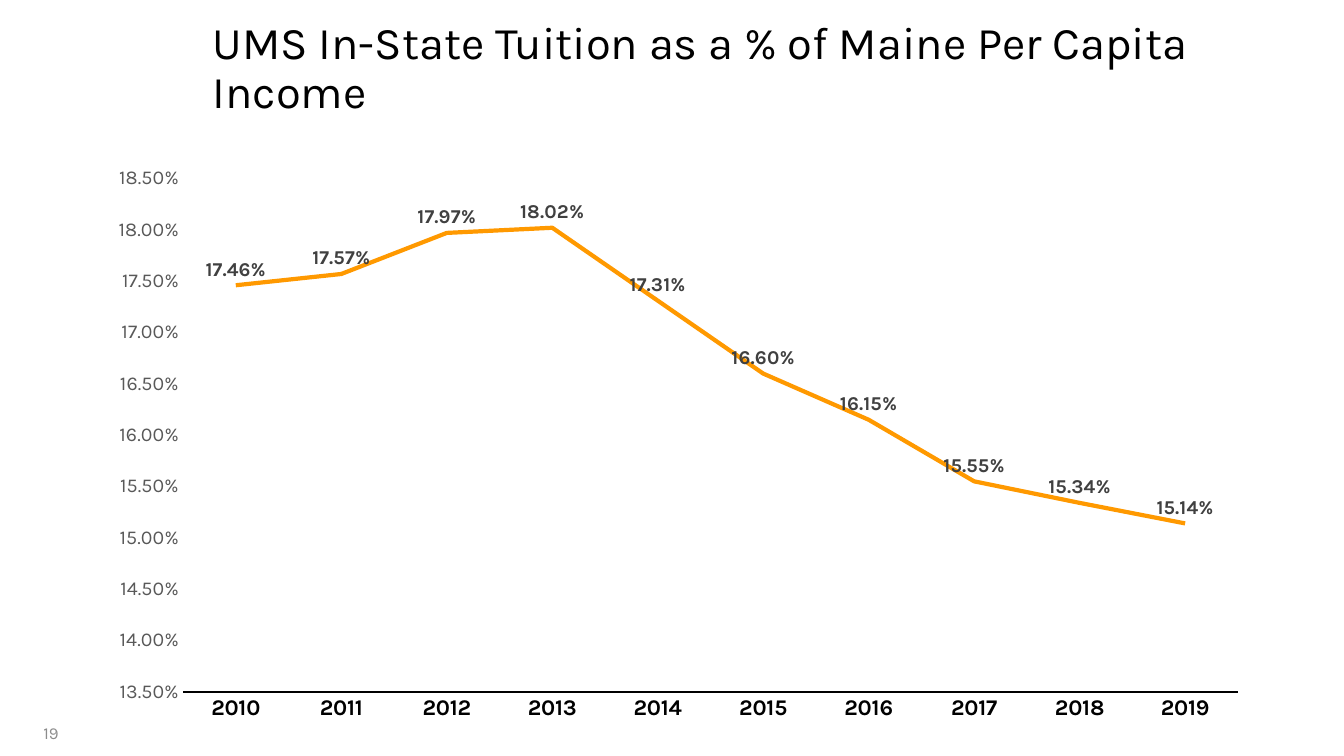
from lxml import etree
from pptx import Presentation
from pptx.chart.data import CategoryChartData
from pptx.dml.color import RGBColor
from pptx.enum.chart import XL_CHART_TYPE, XL_LABEL_POSITION, XL_TICK_MARK
from pptx.enum.chart import XL_MARKER_STYLE
from pptx.enum.text import MSO_ANCHOR, PP_ALIGN
from pptx.oxml.ns import qn
from pptx.util import Cm, Pt

BLACK = RGBColor(0x00, 0x00, 0x00)
ORANGE = RGBColor(0xFF, 0x99, 0x00)
LABEL_GREY = RGBColor(0x40, 0x40, 0x40)
AXIS_GREY = RGBColor(0x59, 0x59, 0x59)
PAGE_GREY = RGBColor(0x8C, 0x8C, 0x8C)

LINE = XL_CHART_TYPE.LINE
ABOVE = XL_LABEL_POSITION.ABOVE
NO_TICK = XL_TICK_MARK.NONE
NO_MARKER = XL_MARKER_STYLE.NONE
MIDDLE = MSO_ANCHOR.MIDDLE
LEFT, RIGHT = PP_ALIGN.LEFT, PP_ALIGN.RIGHT

PERCENT = "0.00%"
YEARS = [str(year) for year in range(2010, 2020)]
TUITION_SHARES = [0.1746, 0.1757, 0.1797, 0.1802, 0.1731,
                  0.1660, 0.1615, 0.1555, 0.1534, 0.1514]
PLOT_LAYOUT = {"layoutTarget": "inner", "xMode": "edge", "yMode": "edge",
               "x": 0.083, "y": 0.073, "w": 0.899, "h": 0.859}


def set_values(target, values):
    for name, value in values.items():
        setattr(target, name, value)


class TuitionSlide:
    font_name = "Karla"

    def __init__(self, deck):
        self.page = deck.slides.add_slide(deck.slide_layouts[6])

    def style_font(self, font, size, color, bold=False):
        set_values(font, {"name": self.font_name, "size": Pt(size), "bold": bold})
        font.color.rgb = color

    def add_text(self, text, place, size, color, align=LEFT, spacing=1.0):
        box = self.page.shapes.add_textbox(*map(Cm, place))
        set_values(box.text_frame, {"word_wrap": True, "vertical_anchor": MIDDLE})
        para = box.text_frame.paragraphs[0]
        set_values(para, {"alignment": align, "line_spacing": spacing})
        span = para.add_run()
        span.text = text
        self.style_font(span.font, size, color)

    def add_line_chart(self, place):
        data = CategoryChartData(number_format=PERCENT)
        data.categories = YEARS
        data.add_series("Series 1", TUITION_SHARES)
        chart = self.page.shapes.add_chart(LINE, *map(Cm, place), data).chart
        set_values(chart, {"has_legend": False, "has_title": False})
        self.style_font(chart.font, 10, BLACK)
        self.style_axes(chart)
        self.style_series(chart.plots[0])
        self.place_plot(chart)

    def style_axes(self, chart):
        years, shares = chart.category_axis, chart.value_axis
        for axis in (years, shares):
            set_values(axis, {"major_tick_mark": NO_TICK, "minor_tick_mark": NO_TICK,
                              "has_major_gridlines": False})
        self.style_font(years.tick_labels.font, 16, BLACK, bold=True)
        years.format.line.color.rgb = BLACK
        years.format.line.width = Pt(1.5)
        self.style_font(shares.tick_labels.font, 14, AXIS_GREY)
        set_values(shares, {"minimum_scale": 0.135, "maximum_scale": 0.185,
                            "major_unit": 0.005})
        set_values(shares.tick_labels, {"number_format": PERCENT,
                                        "number_format_is_linked": False})
        shares.format.line.fill.background()

    def style_series(self, plot):
        plot.vary_by_categories = False
        series = plot.series[0]
        series.smooth = False
        series.marker.style = NO_MARKER
        series.format.line.color.rgb = ORANGE
        series.format.line.width = Pt(3)
        labels = series.data_labels
        set_values(labels, {"show_value": True, "position": ABOVE,
                            "number_format": PERCENT,
                            "number_format_is_linked": False})
        self.style_font(labels.font, 14, LABEL_GREY, bold=True)

    def place_plot(self, chart):
        """Fix the inner plot area at fractions of the chart's size."""
        area = chart.plots[0]._element.getparent()
        for automatic in area.findall(qn("c:layout")):
            area.remove(automatic)
        layout = etree.Element(qn("c:layout"))
        manual = etree.SubElement(layout, qn("c:manualLayout"))
        for name, value in PLOT_LAYOUT.items():
            etree.SubElement(manual, qn(f"c:{name}")).set("val", str(value))
        area.insert(0, layout)


def main():
    deck = Presentation()
    set_values(deck, {"slide_width": Cm(33.87), "slide_height": Cm(19.05)})
    slide = TuitionSlide(deck)
    slide.add_text("19", (0, 17.96, 1.73, 1.02), 12, PAGE_GREY, align=RIGHT)
    slide.add_text("UMS In-State Tuition as a % of Maine Per Capita Income",
                   (5.11, 1.04, 27.25, 1.42), 32.4, BLACK, spacing=0.9)
    slide.add_line_chart((2.16, 3.4, 29.57, 15.06))
    deck.save("out.pptx")


if __name__ == "__main__":
    main()
